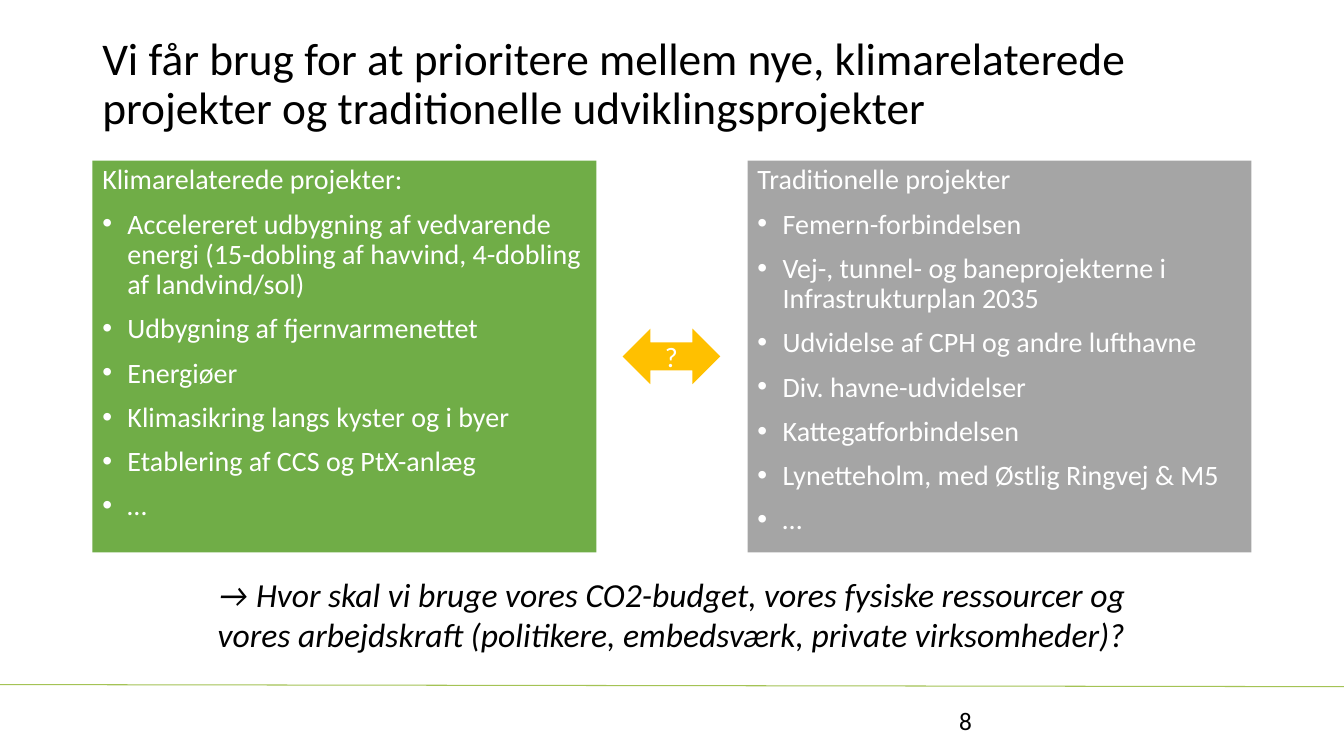
"""Build the slide on prioritising climate projects against traditional projects."""
from dataclasses import dataclass

from lxml.etree import SubElement
from pptx import Presentation
from pptx.dml.color import RGBColor
from pptx.enum.shapes import MSO_CONNECTOR, MSO_SHAPE
from pptx.enum.text import MSO_ANCHOR, PP_ALIGN
from pptx.oxml.ns import qn
from pptx.shapes.autoshape import Shape
from pptx.slide import Slide
from pptx.text.text import TextFrame
from pptx.util import Emu, Pt

EMU_PER_PX = 9525


@dataclass(frozen=True)
class Theme:
    font: str = "Calibri"
    ink: str = "000000"
    paper: str = "FFFFFF"
    climate: str = "70AD47"
    traditional: str = "A5A5A5"
    choice: str = "FFC000"
    rule: str = "A4C355"
    title_pt: float = 32.4
    question_pt: float = 24
    body_pt: float = 20
    number_pt: float = 18


@dataclass(frozen=True)
class Box:
    left: int
    top: int
    width: int
    height: int

    def emu(self) -> tuple[Emu, Emu, Emu, Emu]:
        return px(self.left), px(self.top), px(self.width), px(self.height)


@dataclass(frozen=True)
class ProjectPanel:
    left: int
    fill: str
    heading: str
    projects: tuple[str, ...]


THEME = Theme()
PANELS = (
    ProjectPanel(88, THEME.climate, "Klimarelaterede projekter:", (
        "Accelereret udbygning af vedvarende energi (15-dobling af havvind, 4-dobling af landvind/sol)",
        "Udbygning af fjernvarmenettet",
        "Energiøer",
        "Klimasikring langs kyster og i byer",
        "Etablering af CCS og PtX-anlæg",
        "…",
    )),
    ProjectPanel(712, THEME.traditional, "Traditionelle projekter", (
        "Femern-forbindelsen",
        "Vej-, tunnel- og baneprojekterne i Infrastrukturplan 2035",
        "Udvidelse af CPH og andre lufthavne",
        "Div. havne-udvidelser",
        "Kattegatforbindelsen",
        "Lynetteholm, med Østlig Ringvej & M5",
        "…",
    )),
)


def px(length: int) -> Emu:
    return Emu(length * EMU_PER_PX)


def write(frame: TextFrame, text: str, *, size: float, color: str = THEME.ink,
          align: PP_ALIGN = PP_ALIGN.LEFT, anchor: MSO_ANCHOR = MSO_ANCHOR.TOP,
          italic: bool = False, line_spacing: float = 1.0, bullet: bool = False,
          append: bool = False) -> None:
    frame.word_wrap = True
    frame.vertical_anchor = anchor
    paragraph = frame.add_paragraph() if append else frame.paragraphs[0]
    if bullet:
        properties = paragraph._p.get_or_add_pPr()
        properties.set("marL", str(px(24)))
        properties.set("indent", str(px(-24)))
        SubElement(properties, qn("a:buFont")).set("typeface", "Arial")
        SubElement(properties, qn("a:buChar")).set("char", "•")
    paragraph.alignment = align
    paragraph.line_spacing = line_spacing
    if append:
        paragraph.space_before = Pt(10)
    run = paragraph.add_run()
    run.text = text
    run.font.name = THEME.font
    run.font.size = Pt(size)
    run.font.italic = italic
    run.font.color.rgb = RGBColor.from_string(color)


def add_filled(slide: Slide, preset: MSO_SHAPE, box: Box, fill: str) -> Shape:
    filled = slide.shapes.add_shape(preset, *box.emu())
    filled.shadow.inherit = False
    filled.fill.solid()
    filled.fill.fore_color.rgb = RGBColor.from_string(fill)
    filled.line.fill.background()
    return filled


def add_label(slide: Slide, box: Box) -> TextFrame:
    return slide.shapes.add_textbox(*box.emu()).text_frame


def add_panel(slide: Slide, panel: ProjectPanel) -> None:
    box = Box(panel.left, 153, 480, 373)
    frame = add_filled(slide, MSO_SHAPE.RECTANGLE, box, panel.fill).text_frame
    write(frame, panel.heading, size=THEME.body_pt, color=THEME.paper, line_spacing=0.9)
    for project in panel.projects:
        write(frame, project, size=THEME.body_pt, color=THEME.paper,
              line_spacing=0.9, bullet=True, append=True)


def add_footer_rule(slide: Slide) -> None:
    rule = slide.shapes.add_connector(MSO_CONNECTOR.STRAIGHT, px(0), px(652), px(1280), px(654))
    rule.line.color.rgb = RGBColor.from_string(THEME.rule)
    rule.line.width = Pt(0.75)
    SubElement(rule._element.spPr, qn("a:effectLst"))


def main() -> None:
    presentation = Presentation()
    presentation.slide_width, presentation.slide_height = px(1280), px(720)
    slide = presentation.slides.add_slide(presentation.slide_layouts[6])

    add_footer_rule(slide)
    write(add_label(slide, Box(88, 38, 1104, 86)),
          "Vi får brug for at prioritere mellem nye, klimarelaterede projekter"
          " og traditionelle udviklingsprojekter",
          size=THEME.title_pt, anchor=MSO_ANCHOR.MIDDLE, line_spacing=0.9)
    for panel in PANELS:
        add_panel(slide, panel)
    write(add_label(slide, Box(168, 542, 943, 87)),
          "→ Hvor skal vi bruge vores CO2-budget, vores fysiske ressourcer og"
          " vores arbejdskraft (politikere, embedsværk, private virksomheder)?",
          size=THEME.question_pt, align=PP_ALIGN.CENTER, italic=True)
    choice = add_filled(slide, MSO_SHAPE.LEFT_RIGHT_ARROW, Box(593, 313, 93, 53), THEME.choice)
    write(choice.text_frame, "?", size=THEME.body_pt, color=THEME.paper,
          align=PP_ALIGN.CENTER, anchor=MSO_ANCHOR.MIDDLE)
    write(add_label(slide, Box(904, 667, 288, 38)), "8", size=THEME.number_pt)

    presentation.save("out.pptx")


if __name__ == "__main__":
    main()
